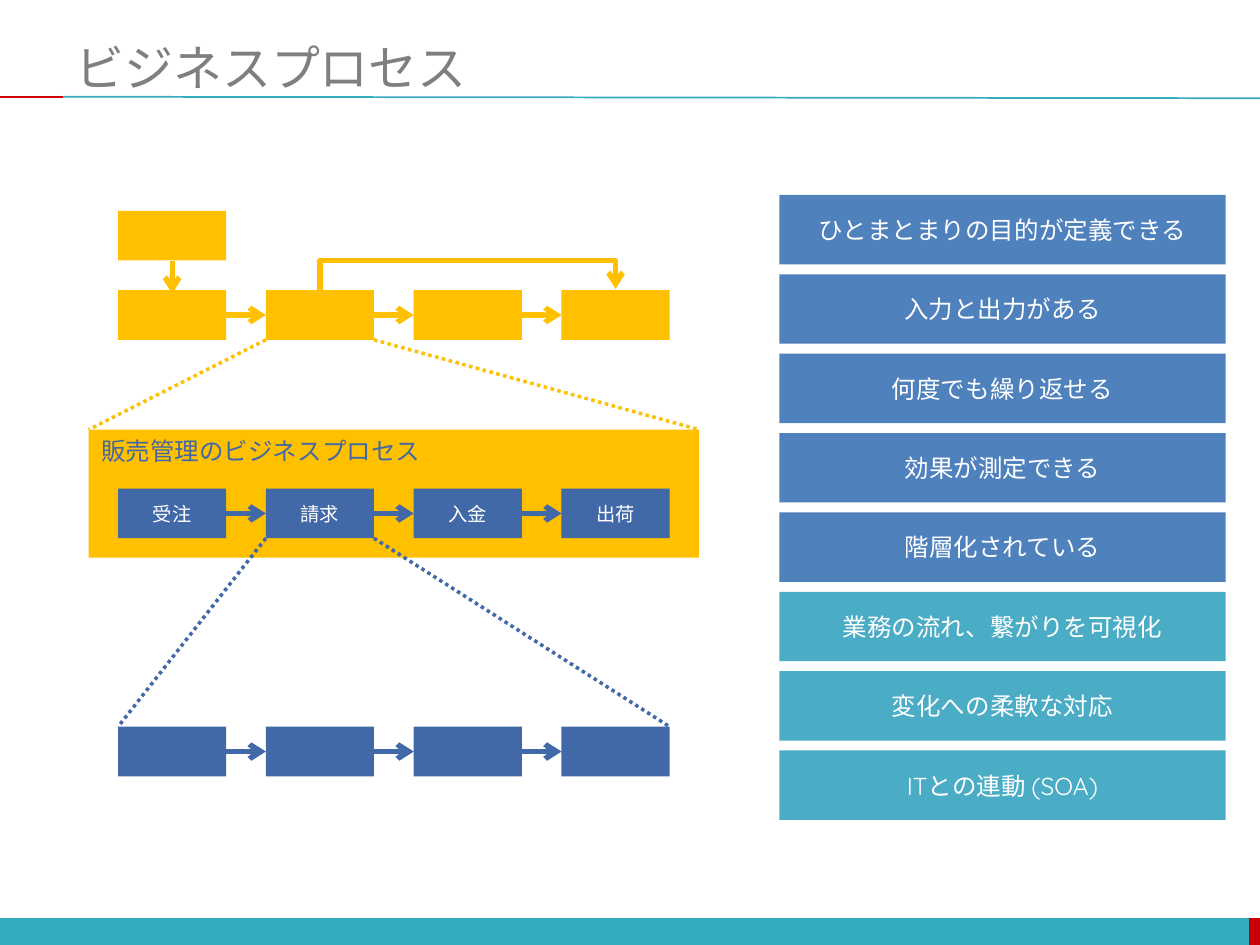
from lxml import etree
from pptx import Presentation
from pptx import util as u
from pptx.dml.color import RGBColor
from pptx.enum import dml, shapes, text
from pptx.oxml.ns import qn

HUES = {"teal": "33ACBD", "red": "CC0000", "gray": "7F7F7F", "gold": "FFC000",
        "navy": "4168A7", "blue": "4F81BD", "aqua": "4BACC6", "white": "FFFFFF"}
TITLE = "ビジネスプロセス"
PANEL = "販売管理のビジネスプロセス"
FLOWS = [(5.85, "gold", [""] * 4),
         (9.85, "navy", ["受注", "請求", "入金", "出荷"]),
         (14.65, "navy", [""] * 4)]
TRAITS = [("blue", "ひとまとまりの目的が定義できる"),
          ("blue", "入力と出力がある"),
          ("blue", "何度でも繰り返せる"),
          ("blue", "効果が測定できる"),
          ("blue", "階層化されている"),
          ("aqua", "業務の流れ、繋がりを可視化"),
          ("aqua", "変化への柔軟な対応"),
          ("aqua", "ITとの連動 (SOA)")]
LEFT, STEP, WIDE, HIGH = 2.38, 2.98, 2.18, 1.0
PANEL_BOX = (1.79, 8.66, 12.3, 2.58)
RECT = shapes.MSO_SHAPE.RECTANGLE
ROUND = shapes.MSO_SHAPE.ROUNDED_RECTANGLE

deck = Presentation()
deck.slide_width, deck.slide_height = u.Cm(25.4), u.Cm(19.05)
slide = deck.slides.add_slide(deck.slide_layouts[6])


def hue(name):
    return RGBColor.from_string(HUES[name])


def write(shape, words, size, color, align, anchor):
    frame = shape.text_frame
    frame.word_wrap = True
    frame.vertical_anchor = anchor
    para = frame.paragraphs[0]
    para.text = words
    para.alignment = align
    para.font.size = u.Pt(size)
    para.font.name = "Quicksand"
    para.font.color.rgb = hue(color)


def block(box, fill, words="", size=14, color="white", kind=RECT,
          align=text.PP_ALIGN.CENTER, anchor=text.MSO_ANCHOR.MIDDLE):
    shape = slide.shapes.add_shape(kind, *map(u.Cm, box))
    if kind == ROUND:
        shape.adjustments[0] = 0
    shape.shadow.inherit = False
    shape.fill.solid()
    shape.fill.fore_color.rgb = hue(fill)
    shape.line.fill.background()
    if words:
        write(shape, words, size, color, align, anchor)


def link(start, end, color, width, arrow=False, dots=False,
         kind=shapes.MSO_CONNECTOR.STRAIGHT):
    line = slide.shapes.add_connector(kind, *map(u.Cm, (*start, *end)))
    line.line.color.rgb = hue(color)
    line.line.width = u.Pt(width)
    if dots:
        line.line.dash_style = dml.MSO_LINE.ROUND_DOT
    props = line._element.spPr
    if arrow:
        etree.SubElement(props.find(qn("a:ln")), qn("a:tailEnd"), type="arrow")
    etree.SubElement(props, qn("a:effectLst"))
    return props


def zoom(top, low, left, right, color):
    base, x = top + HIGH, LEFT + STEP
    link((x, base), (left, low), color, 2, dots=True)
    link((x + WIDE, base), (right, low), color, 2, dots=True)


block((0, 18.51, 25.4, 0.55), "teal")
block((25.18, 18.51, 0.22, 0.55), "red")
link((1.27, 1.95), (25.4, 1.98), "teal", 1)
link((0, 1.95), (1.27, 1.95), "red", 1)
head = slide.shapes.add_textbox(*map(u.Cm, (1.27, 0.76, 24.13, 1.17)))
write(head, TITLE, 28, "gray", text.PP_ALIGN.LEFT, text.MSO_ANCHOR.MIDDLE)

block(PANEL_BOX, "gold", PANEL, color="navy", kind=ROUND,
      align=text.PP_ALIGN.LEFT, anchor=text.MSO_ANCHOR.TOP)
for top, color, names in FLOWS:
    mid = top + HIGH / 2
    for i, name in enumerate(names):
        x = LEFT + i * STEP
        block((x, top, WIDE, HIGH), color, name, 11, kind=ROUND)
        if i:
            link((x - STEP + WIDE, mid), (x, mid), color, 3, arrow=True)

first, second, third = (flow[0] for flow in FLOWS)
block((LEFT, 4.25, WIDE, HIGH), "gold", kind=ROUND)
center = LEFT + WIDE / 2
link((center, 5.26), (center, 5.92), "gold", 3, arrow=True)

span, thin = 2 * STEP, 0.05
hub = center + STEP + span / 2
bend = link((hub + thin / 2, first + span / 2), (hub - thin / 2, first - span / 2),
            "gold", 3, arrow=True, kind=shapes.MSO_CONNECTOR.ELBOW)
bend.find(qn("a:xfrm")).set("rot", "5400000")
guides = bend.find(qn("a:prstGeom")).find(qn("a:avLst"))
etree.SubElement(guides, qn("a:gd"), name="adj1", fmla="val 1250000")

zoom(first, PANEL_BOX[1], PANEL_BOX[0], PANEL_BOX[0] + PANEL_BOX[2], "gold")
zoom(second, third, LEFT, LEFT + 3 * STEP + WIDE, "navy")

for i, (color, words) in enumerate(TRAITS):
    block((15.71, 3.93 + 1.6 * i, 9, 1.4), color, words)

deck.save("out.pptx")
